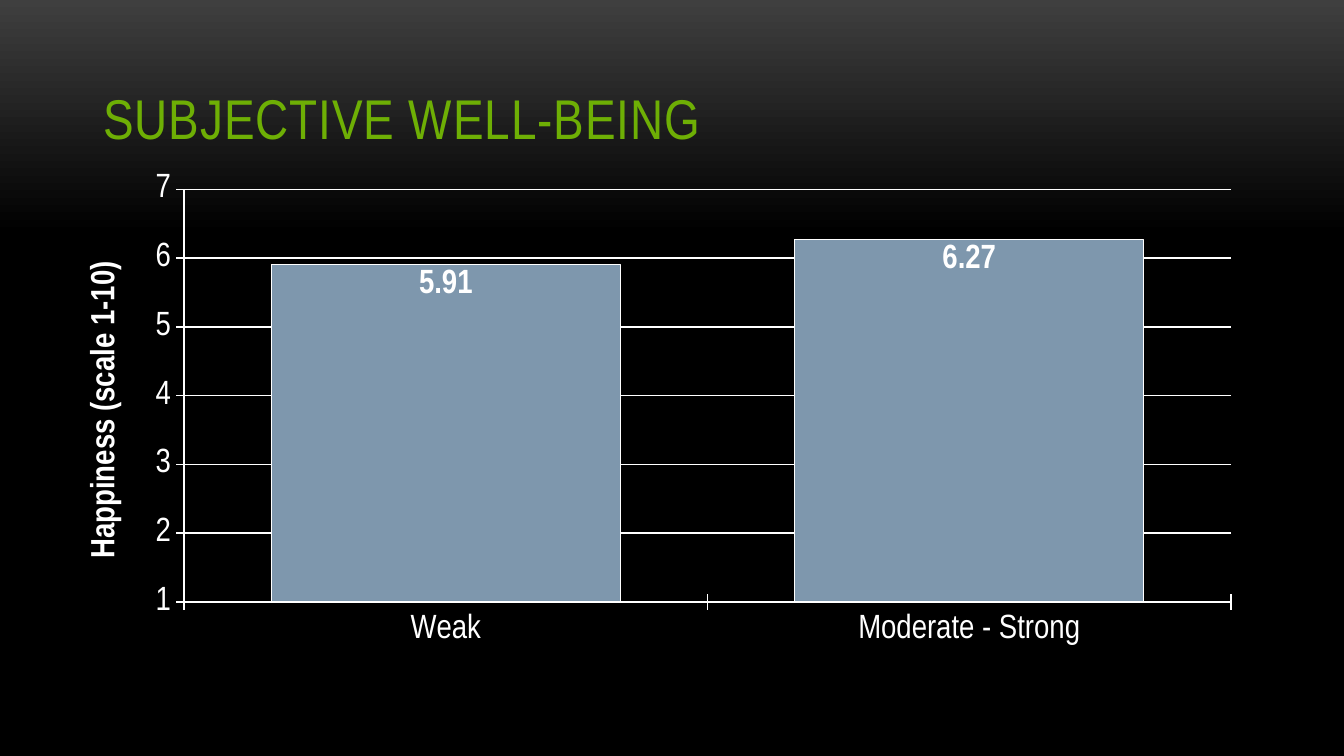
"""Build the subjective well-being slide with its column chart."""
from lxml import etree
from pptx import Presentation
from pptx.chart.data import CategoryChartData
from pptx.dml.color import RGBColor
from pptx.enum.chart import XL_CHART_TYPE, XL_LABEL_POSITION, XL_TICK_MARK
from pptx.enum.text import MSO_ANCHOR
from pptx.oxml.ns import qn
from pptx.util import Inches, Pt

COLUMN = XL_CHART_TYPE.COLUMN_CLUSTERED
INSIDE_END = XL_LABEL_POSITION.INSIDE_END
CROSS = XL_TICK_MARK.CROSS
BOTTOM = MSO_ANCHOR.BOTTOM
FONT = "Arial Narrow"
COLORS = {"glow": "3F3F3F", "ground": "000000", "title": "6EAF05",
          "text": "FFFFFF", "bar": "7E97AD"}


def rgb(name):
    return RGBColor.from_string(COLORS[name])


def set_font(font, size=18, color="text", bold=False):
    font.name, font.size, font.bold = FONT, Pt(size), bold
    font.color.rgb = rgb(color)


def add_text(tf, text, spacing=0, **style):
    r = tf.paragraphs[0].add_run()
    r.text = text
    set_font(r.font, **style)
    if spacing:
        r.font._element.set("spc", str(int(spacing * 100)))


def set_line(line, width=0.75):
    line.color.rgb = rgb("text")
    line.width = Pt(width)


class Deck:
    def __init__(self, prs):
        self.s = prs.slides.add_slide(prs.slide_layouts[6])

    def background(self):
        fill = self.s.background.fill
        fill.gradient()
        fill.gradient_angle = 270
        for stop, name, position in zip(fill.gradient_stops, ("glow", "ground"), (0, 0.31)):
            stop.color.rgb = rgb(name)
            stop.position = position

    def title(self, text, box):
        tf = self.s.shapes.add_textbox(*map(Inches, box)).text_frame
        tf.word_wrap = True
        tf.vertical_anchor = BOTTOM
        add_text(tf, text, size=30, color="title", spacing=0.5)

    def column_chart(self, values, axis_title, box, plot):
        data = CategoryChartData()
        data.categories = list(values)
        data.add_series("Series 1", list(values.values()))
        chart = self.s.shapes.add_chart(COLUMN, *map(Inches, box), data).chart
        chart.has_legend = chart.has_title = False
        set_font(chart.font)
        for axis in (chart.category_axis, chart.value_axis):
            axis.major_tick_mark = CROSS
            set_line(axis.format.line)
        axis = chart.value_axis
        axis.minimum_scale, axis.major_unit = 1, 1
        axis.has_major_gridlines = True
        set_line(axis.major_gridlines.format.line)
        add_text(axis.axis_title.text_frame, axis_title, bold=True)
        self.columns(chart.plots[0])
        width, height = box[2:]
        sides = (width, height, width, height)
        self.plot_area(chart, [part / side for part, side in zip(plot, sides)])

    def columns(self, plot):
        plot.gap_width = 50
        plot.vary_by_categories = False
        bars = plot.series[0]
        bars.format.fill.solid()
        bars.format.fill.fore_color.rgb = rgb("bar")
        set_line(bars.format.line)
        labels = bars.data_labels
        labels.show_value = True
        labels.position = INSIDE_END
        labels.number_format = "#,##0.00"
        labels.number_format_is_linked = False
        set_font(labels.font, bold=True)

    def plot_area(self, chart, fractions):
        area = chart._chartSpace.chart.plotArea
        for old in area.findall(qn("c:layout")):
            area.remove(old)
        layout = etree.Element(qn("c:layout"))
        manual = etree.SubElement(layout, qn("c:manualLayout"))
        settings = [("layoutTarget", "inner"), ("xMode", "edge"), ("yMode", "edge")]
        for tag, value in settings + list(zip("xywh", fractions)):
            etree.SubElement(manual, qn(f"c:{tag}")).set("val", str(value))
        area.insert(0, layout)


def main():
    prs = Presentation()
    prs.slide_width = Inches(10)
    prs.slide_height = prs.slide_width * 9 // 16
    deck = Deck(prs)
    deck.background()
    deck.title("SUBJECTIVE WELL-BEING", (0.67, 0.23, 8.67, 0.94))
    deck.column_chart({"Weak": 5.91, "Moderate - Strong": 6.27}, "Happiness (scale 1-10)",
                      box=(0.42, 1.23, 8.92, 3.66), plot=(0.95, 0.18, 7.79, 3.07))
    prs.save("out.pptx")


if __name__ == "__main__":
    main()
